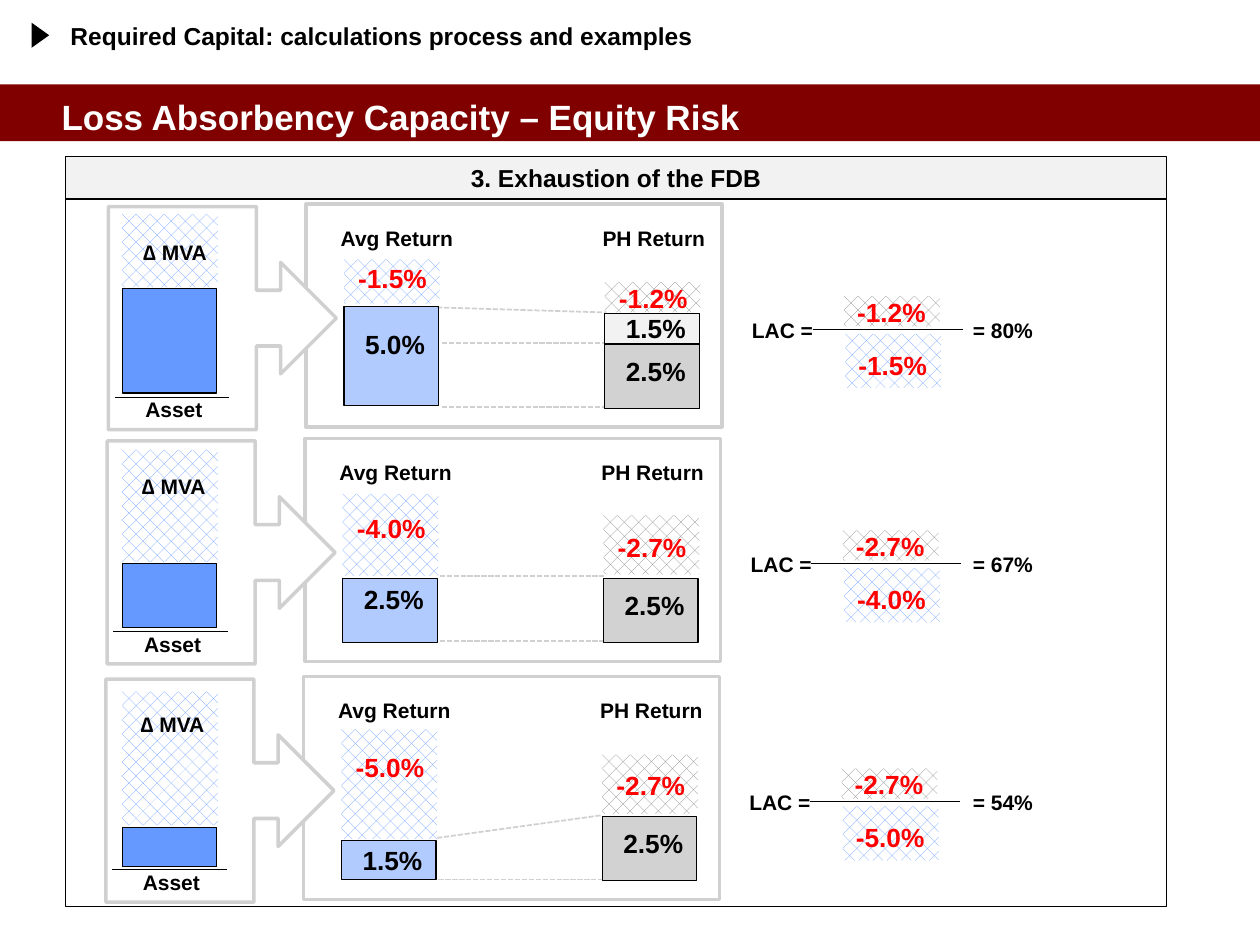
from dataclasses import dataclass

import pptx
import pptx.dml.color
import pptx.enum.dml
import pptx.enum.shapes
import pptx.enum.text
import pptx.oxml
import pptx.oxml.ns
import pptx.util

PX = 9144
SHAPES = pptx.enum.shapes.MSO_SHAPE
ALIGN = pptx.enum.text.PP_ALIGN
ANCHOR = pptx.enum.text.MSO_ANCHOR
BLACK, WHITE, RED, PALE = "000000", "FFFFFF", "FF0000", "F2F2F2"
BLUE, GRAY, HATCH_GRAY, SILVER = "6699FF", "A6A6A6", "808080", "D0D0D0"
ASSET, AVERAGE, HOLDER = 97, 273, 480


@dataclass(frozen=True)
class Bar:
    column: int
    top: int
    height: int
    color: str
    label: str = ""
    label_top: int = 0
    hatched: bool = False
    opacity: int = 100


@dataclass(frozen=True)
class Dash:
    left: int
    top: int
    right: int
    bottom: int


@dataclass(frozen=True)
class Example:
    shift: int
    drop: int
    bars: tuple[Bar, ...]
    dashes: tuple[Dash, ...]
    numerator: str
    denominator: str
    result: str


EXAMPLES = (
    Example(0, 0, (
        Bar(ASSET, 229, 83, BLUE),
        Bar(ASSET, 170, 58, BLUE, hatched=True),
        Bar(AVERAGE, 243, 79, BLUE, "5.0%", 256, opacity=50),
        Bar(AVERAGE, 206, 35, BLUE, "-1.5%", 203, hatched=True),
        Bar(HOLDER, 273, 51, GRAY, "2.5%", 277, opacity=50),
        Bar(HOLDER, 249, 24, PALE, "1.5%", 243),
        Bar(HOLDER, 224, 24, HATCH_GRAY, "-1.2%", 219, hatched=True),
    ), (Dash(351, 323, 480, 323), Dash(351, 272, 480, 272), Dash(347, 244, 481, 248)),
        "-1.2%", "-1.5%", "= 80%"),
    Example(-1, 186, (
        Bar(ASSET, 447, 51, BLUE),
        Bar(ASSET, 357, 89, BLUE, hatched=True),
        Bar(AVERAGE, 459, 51, BLUE, "2.5%", 458, opacity=50),
        Bar(AVERAGE, 392, 65, BLUE, "-4.0%", 402, hatched=True),
        Bar(HOLDER, 459, 51, GRAY, "2.5%", 463, opacity=50),
        Bar(HOLDER, 409, 47, HATCH_GRAY, "-2.7%", 417, hatched=True),
    ), (Dash(349, 509, 479, 509), Dash(349, 457, 479, 457)),
        "-2.7%", "-4.0%", "= 67%"),
    Example(-2, 375, (
        Bar(ASSET, 657, 31, BLUE),
        Bar(ASSET, 549, 106, BLUE, hatched=True),
        Bar(AVERAGE, 667, 31, BLUE, "1.5%", 665, opacity=50),
        Bar(AVERAGE, 579, 87, BLUE, "-5.0%", 591, hatched=True),
        Bar(HOLDER, 648, 51, GRAY, "2.5%", 652, opacity=50),
        Bar(HOLDER, 599, 47, HATCH_GRAY, "-2.7%", 606, hatched=True),
    ), (Dash(348, 698, 478, 698), Dash(347, 665, 478, 647)),
        "-2.7%", "-5.0%", "= 54%"),
)


def rgb(color: str) -> pptx.dml.color.RGBColor:
    return pptx.dml.color.RGBColor.from_string(color)


def write(shape, text: str, size: int, color: str = BLACK, align=ALIGN.CENTER) -> None:
    frame = shape.text_frame
    frame.word_wrap = True
    frame.text = text
    para = frame.paragraphs[0]
    para.alignment = align
    font = para.runs[0].font
    font.name, font.size, font.bold = "Arial", pptx.util.Pt(size), True
    font.color.rgb = rgb(color)


def add_text(page, left: int, top: int, width: int, height: int, text: str,
             size: int = 12, color: str = BLACK, align=ALIGN.CENTER):
    box = page.shapes.add_textbox(left * PX, top * PX, width * PX, height * PX)
    write(box, text, size, color, align)
    return box


def add_box(page, left: int, top: int, width: int, height: int, fill: str = "",
            line: str = "", weight: float = 0.75, kind=SHAPES.RECTANGLE):
    shape = page.shapes.add_shape(kind, left * PX, top * PX, width * PX, height * PX)
    shape.shadow.inherit = False
    if fill:
        shape.fill.solid()
        shape.fill.fore_color.rgb = rgb(fill)
    else:
        shape.fill.background()
    if line:
        shape.line.color.rgb = rgb(line)
        shape.line.width = pptx.util.Pt(weight)
    else:
        shape.line.fill.background()
    return shape


def add_hatch(page, left: int, top: int, height: int, color: str) -> None:
    shape = add_box(page, left, top, 76, height)
    shape.fill.patterned()
    shape.fill.pattern = pptx.enum.dml.MSO_PATTERN.PERCENT_25
    shape.fill.fore_color.rgb = rgb(color)
    shape.fill.back_color.rgb = rgb(WHITE)


def add_line(page, left: int, top: int, right: int, bottom: int,
             color: str = BLACK, weight: float = 0.25):
    line = page.shapes.add_connector(pptx.enum.shapes.MSO_CONNECTOR.STRAIGHT,
                                     left * PX, top * PX, right * PX, bottom * PX)
    line.line.color.rgb = rgb(color)
    line.line.width = pptx.util.Pt(weight)
    pptx.oxml.ns.qn("a:effectLst")
    line._element.spPr.append(pptx.oxml.parse_xml(
        f'<a:effectLst {pptx.oxml.ns.nsdecls("a")}/>'))
    return line


def add_bar(page, bar: Bar, shift: int) -> None:
    left = bar.column if bar.column == ASSET else bar.column + shift
    if bar.hatched:
        add_hatch(page, left, bar.top, bar.height, bar.color)
    else:
        shape = add_box(page, left, bar.top, 75, bar.height, bar.color, BLACK)
        if bar.opacity < 100:
            color = shape._element.spPr.find(".//" + pptx.oxml.ns.qn("a:srgbClr"))
            color.append(pptx.oxml.parse_xml(
                f'<a:alpha {pptx.oxml.ns.nsdecls("a")} val="{bar.opacity * 1000}"/>'))
    if bar.label:
        add_text(page, left if bar.hatched else left + 2, bar.label_top, 77, 35,
                 bar.label, 15, RED if bar.hatched else BLACK)


def add_example(page, example: Example) -> None:
    shift, drop = example.shift, example.drop
    for dash in example.dashes:
        line = add_line(page, dash.left, dash.top, dash.right, dash.bottom, SILVER, 1)
        line.line.dash_style = pptx.enum.dml.MSO_LINE.SQUARE_DOT
    add_box(page, 243 + shift, 162 + drop, 330, 177, "", SILVER, 2)
    add_box(page, 86 + shift, 164 + drop, 181, 177, WHITE, SILVER, 2,
            SHAPES.RIGHT_ARROW_CALLOUT)
    for bar in example.bars:
        add_bar(page, bar, shift)
    add_text(page, 238 + shift, 174 + drop, 154, 30, "Avg Return")
    add_text(page, 456 + shift, 174 + drop, 126, 30, "PH Return")
    add_text(page, 102 + shift, 310 + drop, 72, 30, "Asset")
    add_text(page, 89 + shift, 185 + drop, 100, 30, "∆ MVA")
    add_line(page, 91 + shift, 315 + drop, 182 + shift, 315 + drop)
    add_hatch(page, 671 + shift, 265 + drop, 43, BLUE)
    add_hatch(page, 670 + shift, 235 + drop, 24, HATCH_GRAY)
    add_line(page, 645 + shift, 261 + drop, 764 + shift, 261 + drop)
    add_text(page, 669 + shift, 230 + drop, 77, 35, example.numerator, 15, RED)
    add_text(page, 670 + shift, 272 + drop, 77, 35, example.denominator, 15, RED)
    add_text(page, 585 + shift, 247 + drop, 72, 30, "LAC =")
    add_text(page, 761, 247 + drop, 70, 30, example.result)


def main() -> None:
    deck = pptx.Presentation()
    deck.slide_width, deck.slide_height = 1000 * PX, 750 * PX
    page = deck.slides.add_slide(deck.slide_layouts[6])
    add_box(page, 0, 67, 1000, 45, "800000")
    title = add_text(page, 39, 70, 900, 45, "Loss Absorbency Capacity – Equity Risk",
                     20, WHITE, ALIGN.LEFT)
    title.text_frame.vertical_anchor = ANCHOR.MIDDLE
    heading = add_box(page, 52, 124, 874, 34, PALE, BLACK)
    write(heading, "3. Exhaustion of the FDB", 14)
    add_box(page, 52, 157, 874, 562, "", BLACK, 0.25)
    for example in EXAMPLES:
        add_example(page, example)
    marker = add_box(page, 22, 21, 20, 14, BLACK, kind=SHAPES.ISOSCELES_TRIANGLE)
    marker.rotation = 90
    section = add_text(page, 56, 17, 850, 39,
                       "Required Capital: calculations process and examples",
                       14, BLACK, ALIGN.LEFT)
    frame = section.text_frame
    frame.margin_left = frame.margin_top = frame.margin_right = frame.margin_bottom = 0
    deck.save("out.pptx")


if __name__ == "__main__":
    main()
